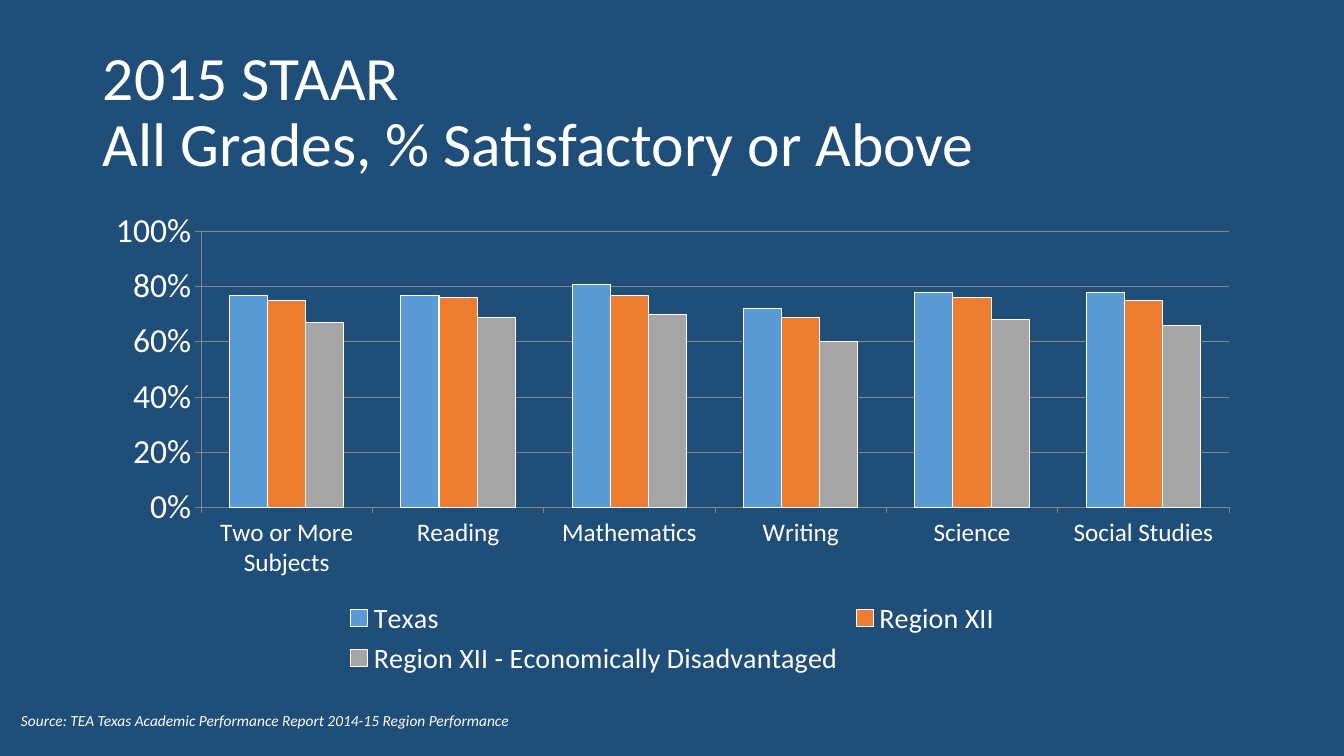
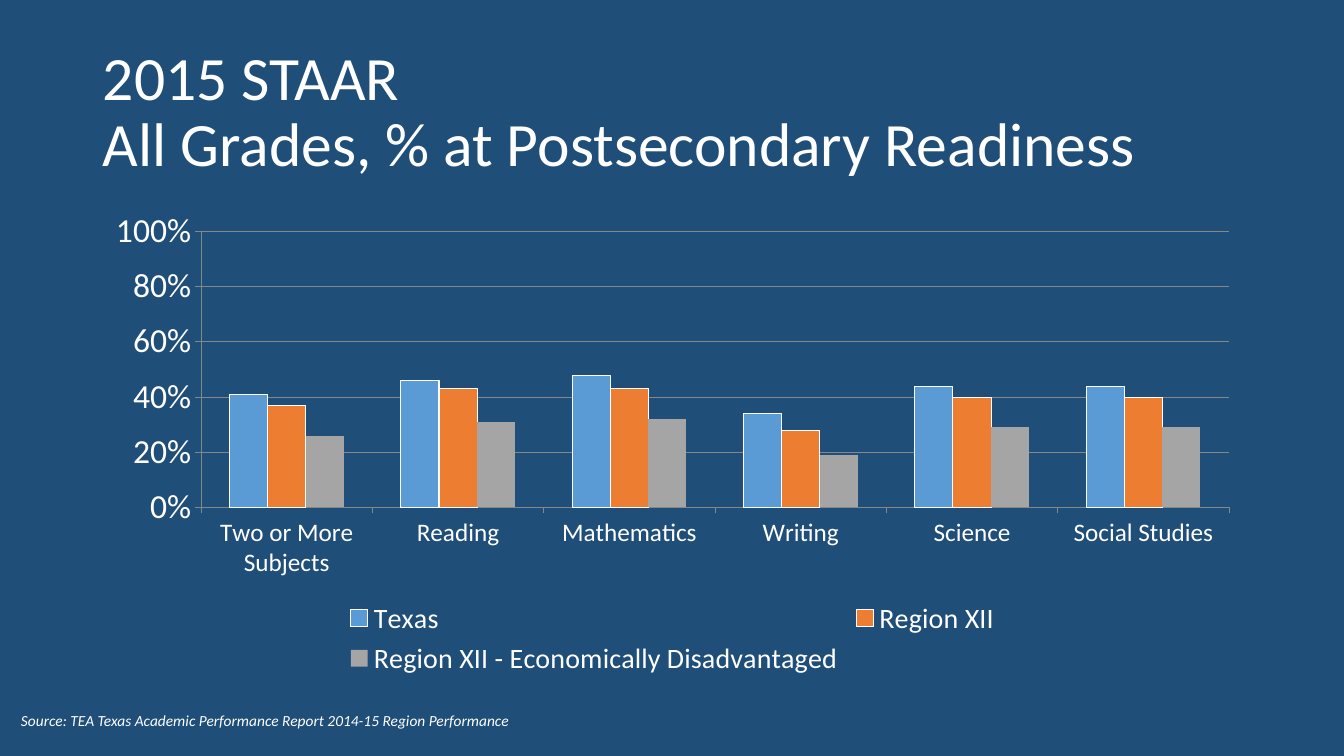
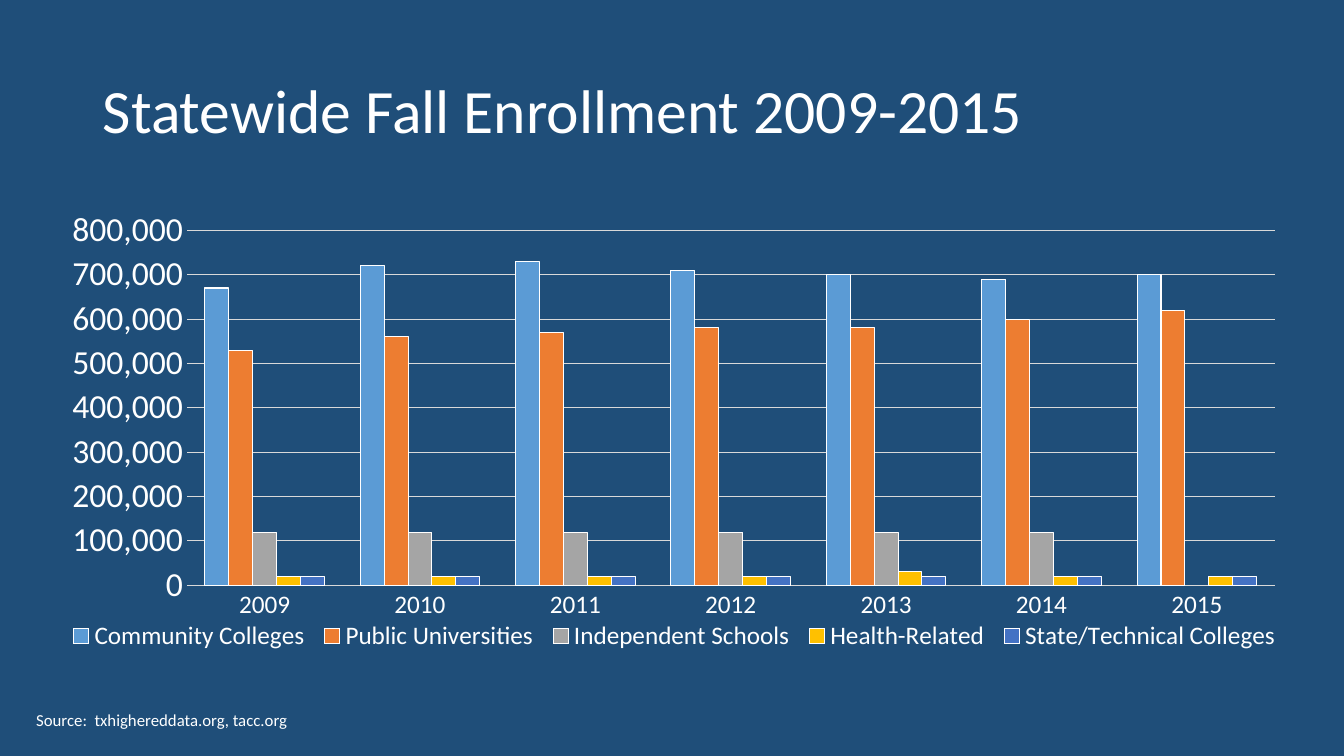
import pptx
import pptx.chart.data
import pptx.dml.color
import pptx.enum.chart
import pptx.enum.text
import pptx.oxml
import pptx.oxml.ns
import pptx.util

Inches, Pt = pptx.util.Inches, pptx.util.Pt
Tick = pptx.enum.chart.XL_TICK_MARK

FONT = "Calibri"
COLORS = {"background": "1F4E79", "text": "FFFFFF", "staar_grid": "878787",
          "enrollment_grid": "D9D9D9"}
SERIES_COLORS = ["5B9BD5", "ED7D31", "A5A5A5", "FFC000", "4472C4"]
TITLE_BOX = (0.92, 0.4, 11.5, 1.45)

SUBJECTS = ["Two or More Subjects", "Reading", "Mathematics", "Writing", "Science",
            "Social Studies"]
GROUPS = ["Texas", "Region XII", "Region XII - Economically Disadvantaged"]
STAAR = {
    "categories": SUBJECTS,
    "box": (0.92, 2, 11.5, 4.76),
    "grid": "staar_grid",
    "tick": Tick.OUTSIDE,
    "axis_line": True,
    "scale": {"minimum_scale": 0, "maximum_scale": 1, "major_unit": 0.2},
    "number_format": "0%",
    "legend_size": 20,
    "layouts": {},
    "unlined": [],
    "source": "Source: TEA Texas Academic Performance Report 2014-15 Region Performance",
    "source_box": (0.11, 7.01, 5.79, 0.29),
    "source_font": {"size": Pt(11), "italic": True},
}

SLIDES = [
    {**STAAR,
     "title": "2015 STAAR \vAll Grades, % Satisfactory or Above",
     "series": dict(zip(GROUPS, [
         [0.77, 0.77, 0.81, 0.72, 0.78, 0.78],
         [0.75, 0.76, 0.77, 0.69, 0.76, 0.75],
         [0.67, 0.69, 0.7, 0.6, 0.68, 0.66]]))},
    {**STAAR,
     "title": "2015 STAAR \vAll Grades, % at Postsecondary Readiness",
     "series": dict(zip(GROUPS, [
         [0.41, 0.46, 0.48, 0.34, 0.44, 0.44],
         [0.37, 0.43, 0.43, 0.28, 0.4, 0.4],
         [0.26, 0.31, 0.32, 0.19, 0.29, 0.29]])),
     "unlined": [GROUPS[2]]},
    {"title": "Statewide Fall Enrollment 2009-2015",
     "categories": [str(year) for year in range(2009, 2016)],
     "series": {
         "Community Colleges": [670000, 720000, 730000, 710000, 700000, 690000, 700000],
         "Public Universities": [530000, 560000, 570000, 580000, 580000, 600000, 620000],
         "Independent Schools": [120000] * 6 + [None],
         "Health-Related": [20000, 20000, 20000, 20000, 30000, 20000, 20000],
         "State/Technical Colleges": [20000] * 7},
     "box": (0.49, 2, 12.4, 4.76),
     "grid": "enrollment_grid",
     "tick": Tick.NONE,
     "axis_line": False,
     "scale": {"minimum_scale": 0, "maximum_scale": 800000, "major_unit": 100000},
     "number_format": "#,##0",
     "legend_size": 18,
     "layouts": {"plotArea": (0.11, 0.06, 0.87, 0.74), "legend": (0.01, 0.87, 0.98, 0.07)},
     "unlined": [],
     "source": "Source:  txhighereddata.org, tacc.org",
     "source_box": (0.26, 6.99, 5.19, 0.3),
     "source_font": {"size": Pt(12)}},
]


def rgb(value):
    return pptx.dml.color.RGBColor.from_string(value)


def set_values(target, values):
    for name, value in values.items():
        setattr(target, name, value)


def place(shape, box):
    set_values(shape, dict(zip(("left", "top", "width", "height"), map(Inches, box))))


def set_font(font, **values):
    set_values(font, {"name": FONT, **values})
    font.color.rgb = rgb(COLORS["text"])


def set_line(line, color):
    line.color.rgb = rgb(color)
    line.width = Pt(0.75)


def set_layout(chart, area, box):
    """Fix the plot area or legend at fractions of the chart's size."""
    qn = pptx.oxml.ns.qn
    element = next(chart._chartSpace.iter(qn("c:" + area)))
    for old in element.findall(qn("c:layout")):
        element.remove(old)
    target = '<c:layoutTarget val="inner"/>' if area == "plotArea" else ""
    modes = "".join(f'<c:{axis}Mode val="edge"/>' for axis in "xy")
    sizes = "".join(f'<c:{name} val="{value}"/>' for name, value in zip("xywh", box))
    layout = pptx.oxml.parse_xml(
        f'<c:layout {pptx.oxml.ns.nsdecls("c")}><c:manualLayout>{target}{modes}{sizes}'
        "</c:manualLayout></c:layout>")
    element.insert(0 if area == "plotArea" else 1, layout)


def add_title(slide, text):
    title = slide.shapes.title
    place(title, TITLE_BOX)
    frame = title.text_frame
    frame.text = text
    set_values(frame, {"vertical_anchor": pptx.enum.text.MSO_ANCHOR.MIDDLE,
                       "auto_size": pptx.enum.text.MSO_AUTO_SIZE.NONE})
    paragraph = frame.paragraphs[0]
    set_values(paragraph, {"alignment": pptx.enum.text.PP_ALIGN.LEFT, "line_spacing": 0.9})
    for run in paragraph.runs:
        set_font(run.font, size=Pt(44))


def add_column_chart(slide, content):
    data = pptx.chart.data.CategoryChartData(number_format=content["number_format"])
    data.categories = content["categories"]
    for name, values in content["series"].items():
        data.add_series(name, values)
    chart = slide.shapes.add_chart(
        pptx.enum.chart.XL_CHART_TYPE.COLUMN_CLUSTERED,
        *map(Inches, content["box"]), data).chart
    set_values(chart, {"has_title": False, "has_legend": True})
    set_font(chart.font, size=Pt(24))

    plot = chart.plots[0]
    set_values(plot, {"gap_width": 150, "overlap": 0, "vary_by_categories": False})
    for series, color in zip(plot.series, SERIES_COLORS):
        series.format.fill.solid()
        series.format.fill.fore_color.rgb = rgb(color)
        if series.name in content["unlined"]:
            series.format.line.fill.background()
        else:
            set_line(series.format.line, COLORS["text"])

    grid = COLORS[content["grid"]]
    category_axis, value_axis = chart.category_axis, chart.value_axis
    for axis in (category_axis, value_axis):
        set_values(axis, {"major_tick_mark": content["tick"], "minor_tick_mark": Tick.NONE})
        set_line(axis.format.line, grid)
    if not content["axis_line"]:
        value_axis.format.line.fill.background()
    set_font(category_axis.tick_labels.font, size=Pt(18))
    set_font(value_axis.tick_labels.font, size=Pt(24))
    set_values(value_axis, {"has_major_gridlines": True, **content["scale"]})
    set_values(value_axis.tick_labels, {"number_format": content["number_format"],
                                        "number_format_is_linked": False})
    set_line(value_axis.major_gridlines.format.line, grid)

    set_values(chart.legend, {"position": pptx.enum.chart.XL_LEGEND_POSITION.BOTTOM,
                              "include_in_layout": False})
    set_font(chart.legend.font, size=Pt(content["legend_size"]))
    for area, box in content["layouts"].items():
        set_layout(chart, area, box)


def add_source(slide, content):
    frame = slide.shapes.add_textbox(*map(Inches, content["source_box"])).text_frame
    frame.text = content["source"]
    set_values(frame, {"word_wrap": True,
                       "auto_size": pptx.enum.text.MSO_AUTO_SIZE.SHAPE_TO_FIT_TEXT})
    set_font(frame.paragraphs[0].runs[0].font, **content["source_font"])


def main():
    presentation = pptx.Presentation()
    set_values(presentation, {"slide_width": Inches(13.33), "slide_height": Inches(7.5)})
    fill = presentation.slide_master.background.fill
    fill.solid()
    fill.fore_color.rgb = rgb(COLORS["background"])
    title_only = presentation.slide_layouts.get_by_name("Title Only")
    for content in SLIDES:
        slide = presentation.slides.add_slide(title_only)
        add_title(slide, content["title"])
        add_column_chart(slide, content)
        add_source(slide, content)
    presentation.save("out.pptx")


if __name__ == "__main__":
    main()
